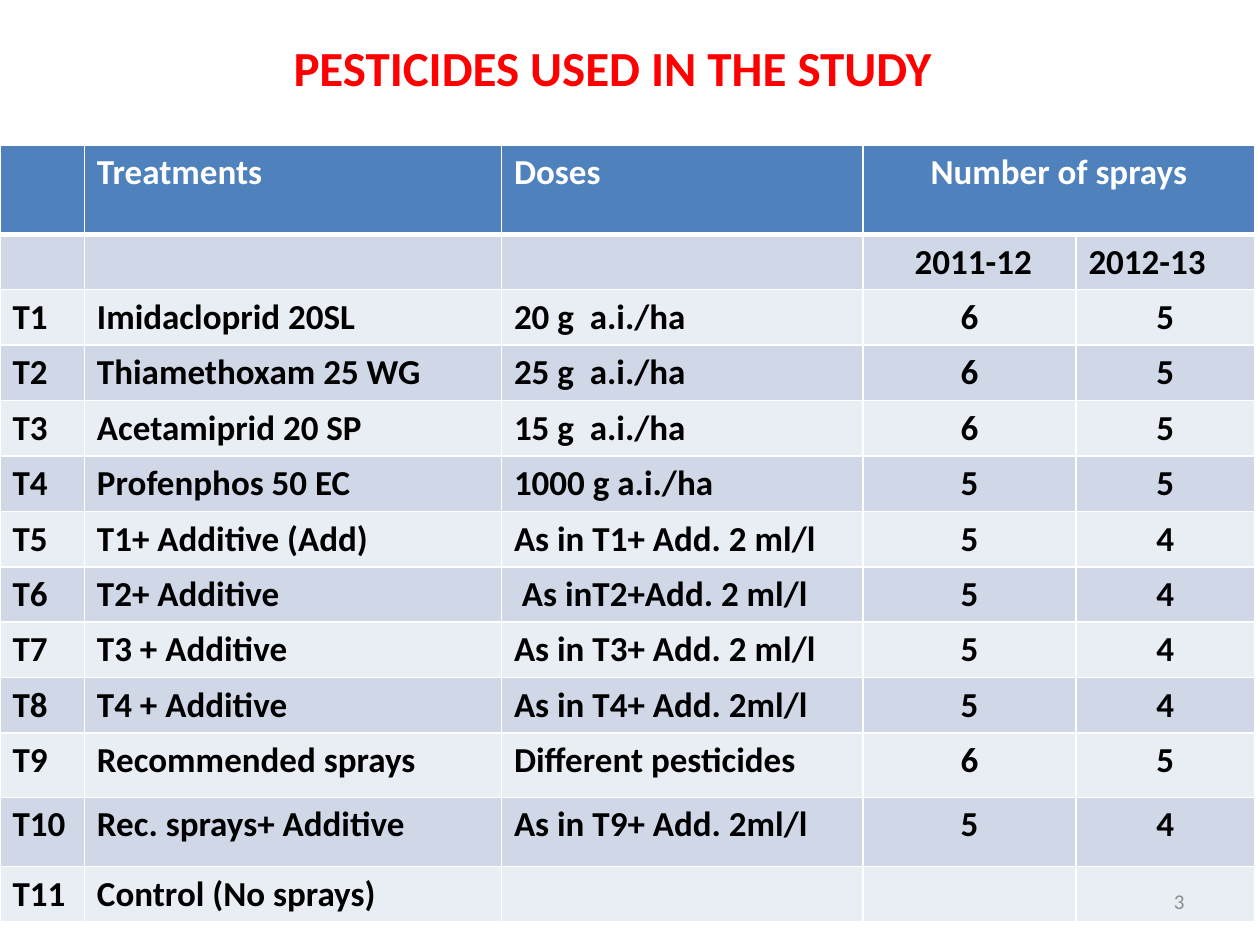
from dataclasses import dataclass

from lxml import etree
from pptx import Presentation
from pptx.dml.color import RGBColor
from pptx.enum.text import MSO_ANCHOR, PP_ALIGN
from pptx.oxml.ns import qn
from pptx.util import Inches, Pt

LEFT, CENTER, RIGHT = PP_ALIGN.LEFT, PP_ALIGN.CENTER, PP_ALIGN.RIGHT
MIDDLE = MSO_ANCHOR.MIDDLE


@dataclass(frozen=True)
class Theme:
    font: str = "Calibri"
    title: str = "FF0000"
    header: str = "4F81BD"
    bands: tuple = ("D0D8E8", "E9EDF4")
    white: str = "FFFFFF"
    ink: str = "000000"
    muted: str = "8C8C8C"
    title_size: int = 28
    table_size: int = 20
    number_size: int = 12
    rule: float = 1
    header_rule: float = 3


THEME = Theme()

COLUMN_WIDTHS = [0.67, 3.31, 2.87, 1.69, 1.42]
ROW_HEIGHTS = [0.71] + [0.44] * 9 + [0.51, 0.55, 0.44]
SPRAY_COLUMN = 3
YEAR_INDENT = 0.41

HEADINGS = [
    ("", "Treatments", "Doses", "Number of sprays", ""),
    ("", "", "", "2011-12", "2012-13"),
]
TREATMENTS = [
    ("Imidacloprid 20SL", "20 g  a.i./ha", "6", "5"),
    ("Thiamethoxam 25 WG", "25 g  a.i./ha", "6", "5"),
    ("Acetamiprid 20 SP", "15 g  a.i./ha", "6", "5"),
    ("Profenphos 50 EC", "1000 g a.i./ha", "5", "5"),
    ("T1+ Additive (Add)", "As in T1+ Add. 2 ml/l", "5", "4"),
    ("T2+ Additive", " As inT2+Add. 2 ml/l", "5", "4"),
    ("T3 + Additive", "As in T3+ Add. 2 ml/l", "5", "4"),
    ("T4 + Additive", "As in T4+ Add. 2ml/l", "5", "4"),
    ("Recommended sprays", "Different pesticides", "6", "5"),
    ("Rec. sprays+ Additive", "As in T9+ Add. 2ml/l", "5", "4"),
    ("Control (No sprays)", "", "", ""),
]


def style_paragraph(paragraph, size, color, align, bold):
    paragraph.alignment = align
    font = paragraph.font
    font.name, font.size, font.bold = THEME.font, Pt(size), bold
    font.color.rgb = RGBColor.from_string(color)


def add_label(slide, box, text, size, color, align, bold=False):
    frame = slide.shapes.add_textbox(*map(Inches, box)).text_frame
    frame.word_wrap = True
    frame.vertical_anchor = MIDDLE
    frame.text = text
    style_paragraph(frame.paragraphs[0], size, color, align, bold)


def set_borders(cell, row):
    """White rules all round, heavier between the header and the body."""
    widths = {
        "a:lnL": THEME.rule,
        "a:lnR": THEME.rule,
        "a:lnT": THEME.header_rule if row == 1 else THEME.rule,
        "a:lnB": THEME.header_rule if row == 0 else THEME.rule,
    }
    properties = cell._tc.get_or_add_tcPr()
    for side, width in widths.items():
        line = etree.SubElement(properties, qn(side), w=str(Pt(width)))
        fill = etree.SubElement(line, qn("a:solidFill"))
        etree.SubElement(fill, qn("a:srgbClr"), val=THEME.white)


def fill_cell(cell, row, column, text):
    is_header = row == 0
    set_borders(cell, row)
    cell.fill.solid()
    background = THEME.header if is_header else THEME.bands[(row - 1) % 2]
    cell.fill.fore_color.rgb = RGBColor.from_string(background)
    cell.text = text
    centered = column >= SPRAY_COLUMN and row != 1
    style_paragraph(cell.text_frame.paragraphs[0], THEME.table_size,
                    THEME.white if is_header else THEME.ink,
                    CENTER if centered else LEFT, True)


def add_treatment_table(slide, left, top):
    rows = HEADINGS + [(f"T{number}", *treatment)
                       for number, treatment in enumerate(TREATMENTS, 1)]
    box = (left, top, sum(COLUMN_WIDTHS), sum(ROW_HEIGHTS))
    table = slide.shapes.add_table(len(rows), len(COLUMN_WIDTHS),
                                   *map(Inches, box)).table
    for column, width in zip(table.columns, COLUMN_WIDTHS):
        column.width = Inches(width)
    for table_row, height in zip(table.rows, ROW_HEIGHTS):
        table_row.height = Inches(height)
    for r, texts in enumerate(rows):
        for c, text in enumerate(texts):
            fill_cell(table.cell(r, c), r, c, text)
    table.cell(0, SPRAY_COLUMN).merge(table.cell(0, SPRAY_COLUMN + 1))
    table.cell(1, SPRAY_COLUMN).margin_left = Inches(YEAR_INDENT)


def main():
    deck = Presentation()
    deck.slide_width, deck.slide_height = Inches(10), Inches(7.5)
    slide = deck.slides.add_slide(deck.slide_layouts[6])
    add_label(slide, (0, 0, 9.72, 1.07), "PESTICIDES USED IN THE STUDY",
              THEME.title_size, THEME.title, CENTER, bold=True)
    add_treatment_table(slide, 0, 1.15)
    add_label(slide, (7.17, 6.95, 2.33, 0.4), "3",
              THEME.number_size, THEME.muted, RIGHT)
    deck.save("out.pptx")


if __name__ == "__main__":
    main()
